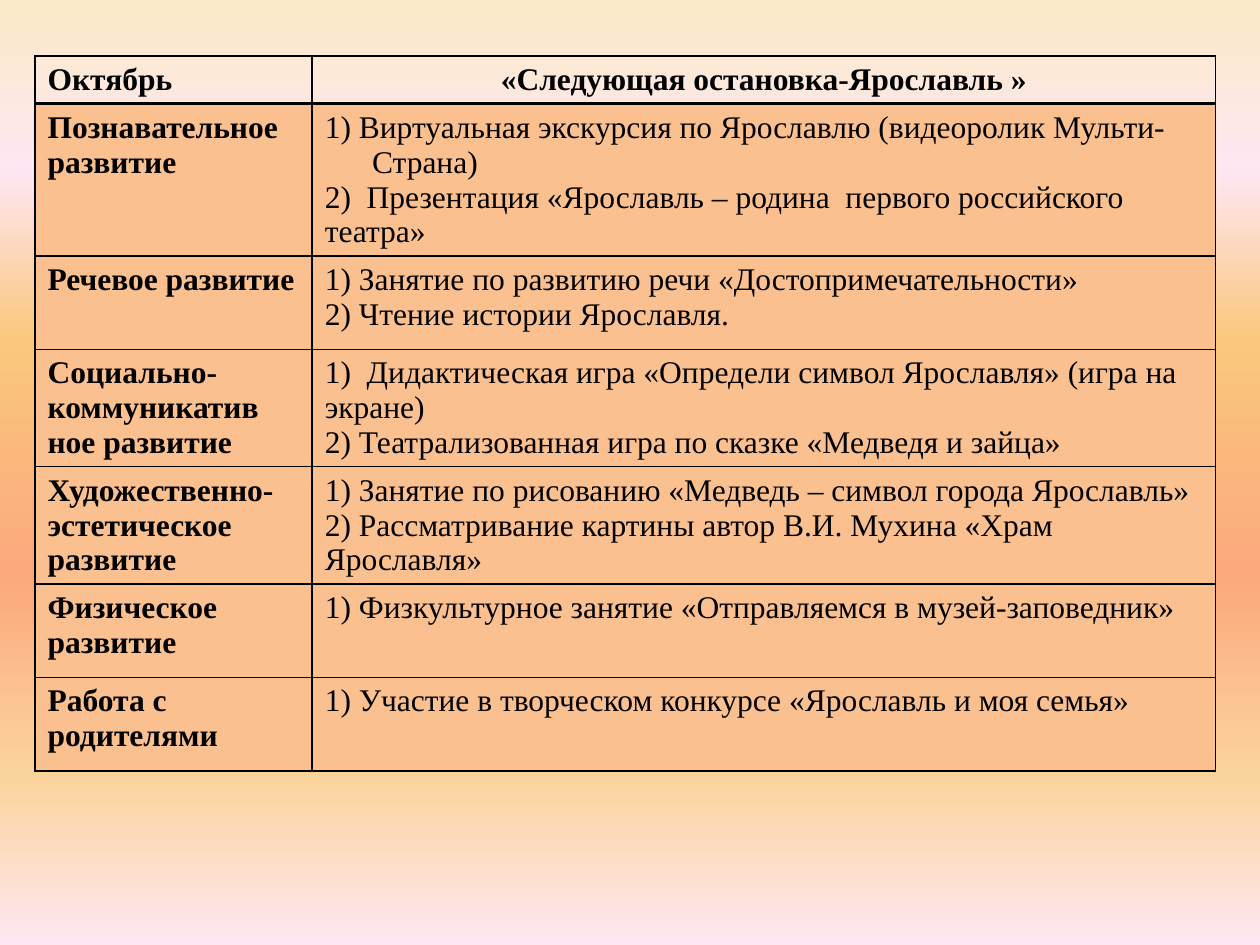
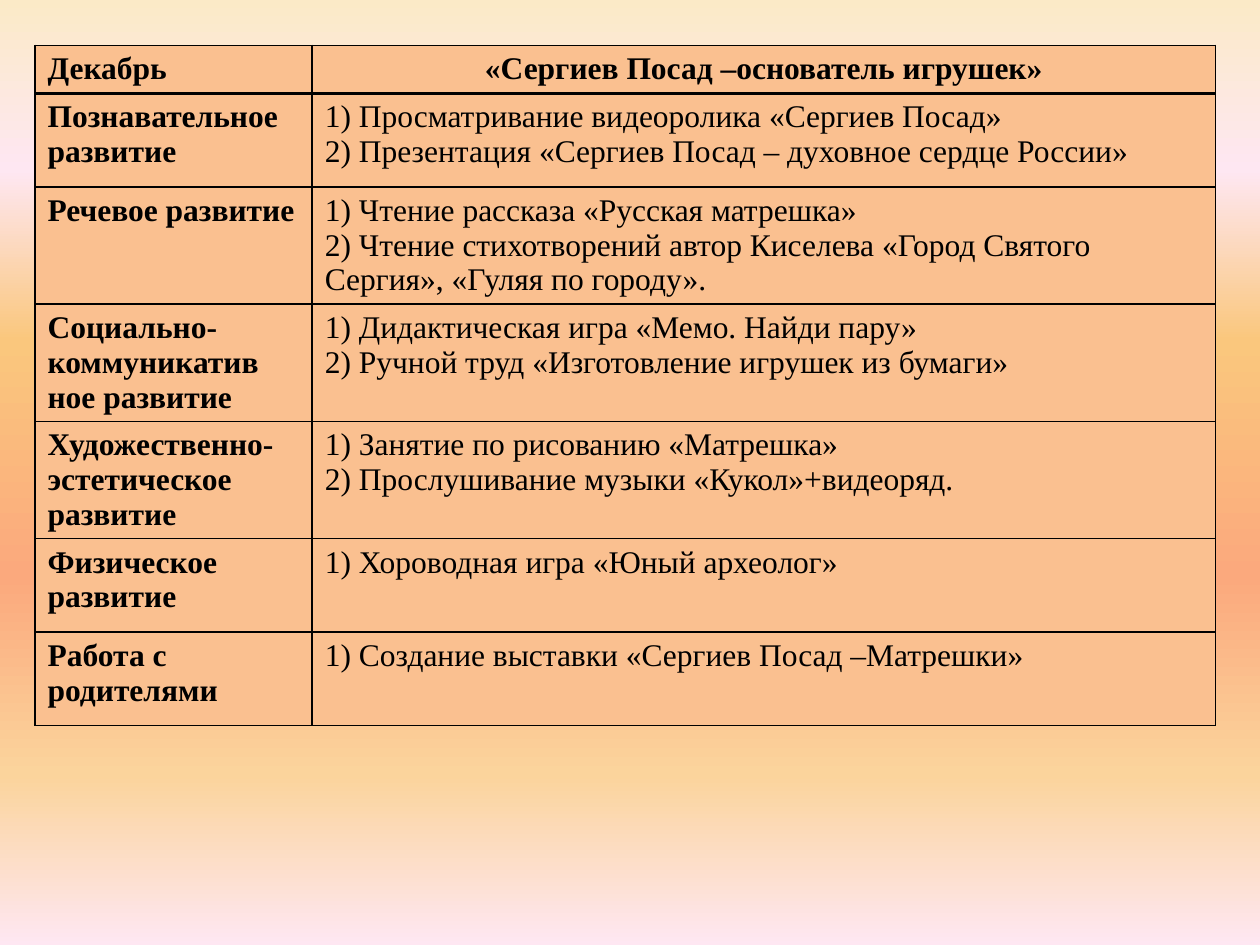
from lxml import etree
from pptx import Presentation
from pptx.dml.color import RGBColor
from pptx.enum.text import PP_ALIGN
from pptx.oxml.ns import qn
from pptx.util import Pt

CENTER = PP_ALIGN.CENTER
FONT = "Times New Roman"
HEX = {"ink": "000000", "peach": "FAC090", "cream": "FBEAC7", "pink": "FEE7F2",
       "gold": "FAC77D", "coral": "FBA97D", "sand": "FBD49C"}
STOPS = [(0, "cream"), (18, "pink"), (36, "gold"),
         (61, "coral"), (82, "sand"), (100, "pink")]
WIDTHS = [158.4, 516.2]
LEFT, HEAD, ROW = 20, 27.4, 53.4

# Areas of work, the same on every slide
AREAS = [["Познавательное развитие"], ["Речевое развитие"],
         ["Социально-коммуникатив", "ное развитие"],
         ["Художественно-эстетическое развитие"],
         ["Физическое развитие"], ["Работа с родителями"]]

# Monthly plans; "hang" marks cells whose first line hangs
MONTHS = [
    {"name": "Октябрь", "title": "«Следующая остановка-Ярославль »",
     "top": 32, "tall": 427, "filled": False, "hang": [1],
     "tasks": [
         ["1) Виртуальная экскурсия по Ярославлю (видеоролик Мульти-Страна)",
          "2)  Презентация «Ярославль – родина  первого российского театра»"],
         ["1) Занятие по развитию речи «Достопримечательности»",
          "2) Чтение истории Ярославля."],
         ["1)  Дидактическая игра «Определи символ Ярославля» (игра на экране)",
          "2) Театрализованная игра по сказке «Медведя и зайца»"],
         ["1) Занятие по рисованию «Медведь – символ города Ярославль»",
          "2) Рассматривание картины автор В.И. Мухина «Храм Ярославля»"],
         ["1) Физкультурное занятие «Отправляемся в музей-заповедник»"],
         ["1) Участие в творческом конкурсе «Ярославль и моя семья»"]]},
    {"name": "Декабрь", "title": "«Сергиев Посад –основатель игрушек»",
     "top": 26, "tall": 405.4, "filled": True, "hang": [],
     "tasks": [
         ["1) Просматривание видеоролика «Сергиев Посад»",
          "2) Презентация «Сергиев Посад – духовное сердце России»"],
         ["1) Чтение рассказа «Русская матрешка»",
          "2) Чтение стихотворений автор Киселева «Город Святого Сергия», "
          "«Гуляя по городу»."],
         ["1) Дидактическая игра «Мемо. Найди пару»",
          "2) Ручной труд «Изготовление игрушек из бумаги»"],
         ["1) Занятие по рисованию «Матрешка»",
          "2) Прослушивание музыки «Кукол»+видеоряд."],
         ["1) Хороводная игра «Юный археолог»"],
         ["1) Создание выставки «Сергиев Посад –Матрешки»"]]},
]


def write(cell, lines, bold):
    frame = cell.text_frame
    for i, line in enumerate(lines):
        para = frame.add_paragraph() if i else frame.paragraphs[0]
        run = para.add_run()
        run.text = line
        run.font.name, run.font.size, run.font.bold = FONT, Pt(18), bold
        run.font.color.rgb = RGBColor.from_string(HEX["ink"])


def border(cell, row):
    props = cell._tc.get_or_add_tcPr()
    thick = {0: "lnB", 1: "lnT"}.get(row)
    for side in ("lnL", "lnR", "lnT", "lnB"):
        width = Pt(2 if side == thick else 1)
        line = etree.SubElement(props, qn("a:" + side), w=str(int(width)))
        fill = etree.SubElement(line, qn("a:solidFill"))
        etree.SubElement(fill, qn("a:srgbClr"), val=HEX["ink"])


deck = Presentation()
deck.slide_width, deck.slide_height = Pt(720), Pt(540)

# Shared gradient on the master, running from top to bottom
master = deck.slide_master
back = master.background.fill
back.gradient()
back.gradient_angle = 270
ramp = master.element.find(".//" + qn("a:gsLst"))
for old in list(ramp):
    ramp.remove(old)
for pos, tone in STOPS:
    stop = etree.SubElement(ramp, qn("a:gs"), pos=str(pos * 1000))
    etree.SubElement(stop, qn("a:srgbClr"), val=HEX[tone])

# One slide with one table per month
for month in MONTHS:
    slide = deck.slides.add_slide(deck.slide_layouts[6])
    rows = [([month["name"]], [month["title"]])] + list(zip(AREAS, month["tasks"]))
    shape = slide.shapes.add_table(len(rows), 2, Pt(LEFT), Pt(month["top"]),
                                   Pt(sum(WIDTHS)), Pt(month["tall"]))
    table = shape.table
    table.first_row = table.horz_banding = False
    for col, width in zip(table.columns, WIDTHS):
        col.width = Pt(width)

    for r, texts in enumerate(rows):
        table.rows[r].height = Pt(ROW if r else HEAD)
        for c, lines in enumerate(texts):
            cell = table.cell(r, c)
            write(cell, lines, bold=r == 0 or c == 0)
            border(cell, r)
            if r or month["filled"]:
                cell.fill.solid()
                cell.fill.fore_color.rgb = RGBColor.from_string(HEX["peach"])
            else:
                cell.fill.background()

    # Centred heading and hanging first lines
    table.cell(0, 1).text_frame.paragraphs[0].alignment = CENTER
    for r in month["hang"]:
        para = table.cell(r, 1).text_frame.paragraphs[0]
        props = para._p.get_or_add_pPr()
        props.set("marL", str(int(Pt(27))))
        props.set("indent", str(int(Pt(-27))))
    shape.height = Pt(month["tall"])

deck.save("out.pptx")
